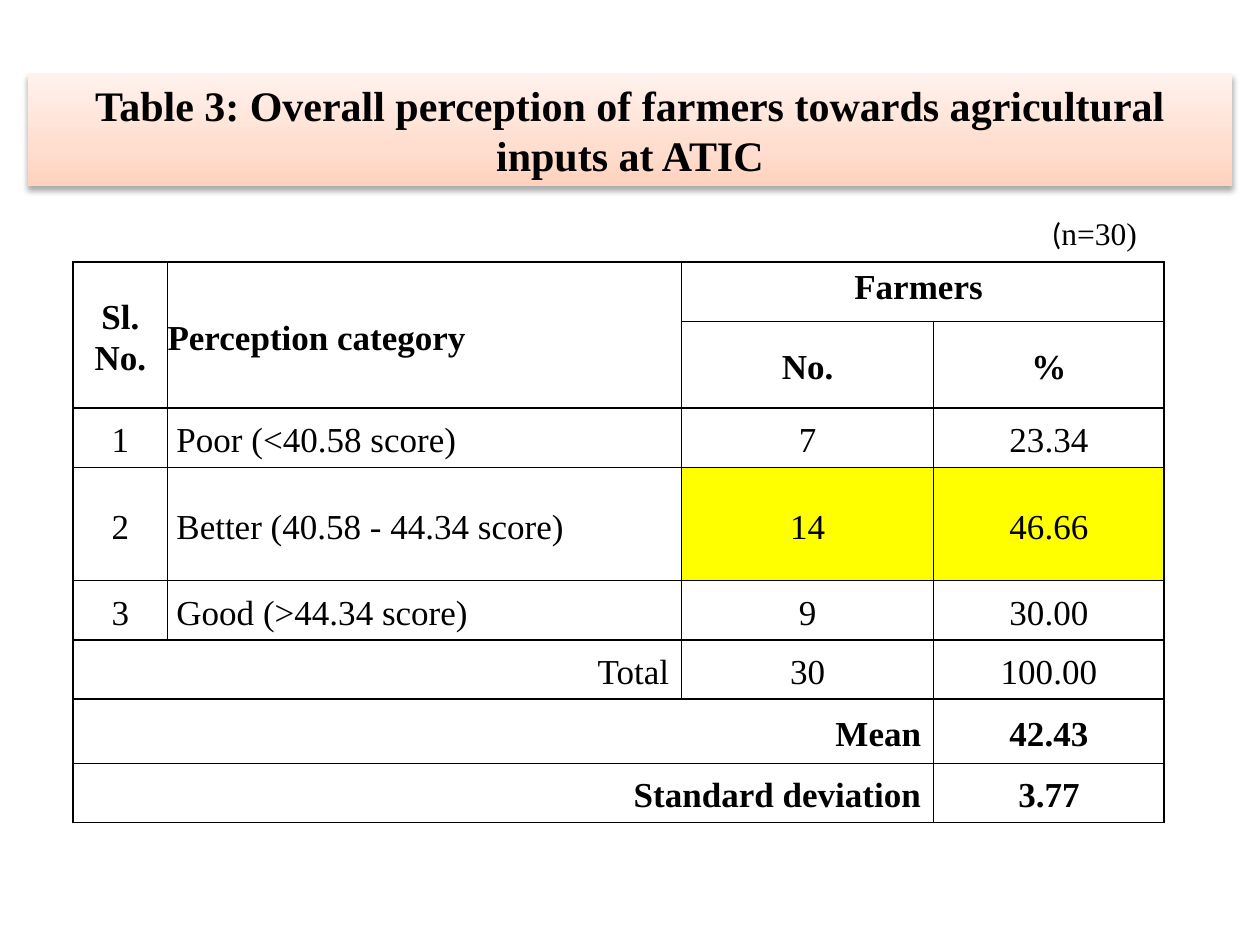
import copy

import pptx
import pptx.dml.color
import pptx.enum.text
import pptx.oxml
import pptx.oxml.ns
import pptx.util

Inches = pptx.util.Inches
Pt = pptx.util.Pt
RGBColor = pptx.dml.color.RGBColor
ALIGN = pptx.enum.text.PP_ALIGN
ANCHOR = pptx.enum.text.MSO_ANCHOR

BLACK = RGBColor(0x00, 0x00, 0x00)
YELLOW = RGBColor(0xFF, 0xFF, 0x00)
PEACH_STOPS = [
    (0, RGBColor(0xFF, 0xD2, 0xBD)),
    (0.35, RGBColor(0xFF, 0xDE, 0xD0)),
    (1, RGBColor(0xFF, 0xF2, 0xED)),
]
SERIF = "Times New Roman"
SANS = "Calibri"

COLUMN_WIDTHS = [0.75, 3.25, 0.83, 2, 1.83]
ROW_HEIGHTS = [0.47, 0.47, 0.47, 0.9, 0.47, 0.47, 0.51, 0.47]
TABLE_TEXT = [
    ["Sl. No.", "Perception category", "", "Farmers ", ""],
    ["", "", "", "No.", "%"],
    ["1", "Poor (<40.58 score)", "", "7", "23.34"],
    ["2", "Better (40.58 - 44.34 score)", "", "14", "46.66"],
    ["3", "Good (>44.34 score)", "", "9", "30.00"],
    ["", "", "Total ", "30", "100.00"],
    ["", "", "Mean ", "", "42.43"],
    ["", "", "Standard deviation ", "", "3.77"],
]
MERGES = [
    ((0, 0), (1, 0)),
    ((0, 1), (1, 1)),
    ((0, 2), (1, 2)),
    ((0, 3), (0, 4)),
    ((6, 2), (6, 3)),
    ((7, 2), (7, 3)),
]
HEADER_ROWS = 2
HIGHLIGHT_ROW = 3
TOTAL_ROW = 5


def add_run(paragraph, text, size, font=SERIF, bold=False):
    run = paragraph.add_run()
    run.text = text
    run.font.size = Pt(size)
    run.font.name = font
    run.font.bold = bold
    run.font.color.rgb = BLACK


def place(shape, left, top, width, height):
    shape.left, shape.top = Inches(left), Inches(top)
    shape.width, shape.height = Inches(width), Inches(height)


def add_shadow(shape):
    shape._element.spPr.append(pptx.oxml.parse_xml(
        f'<a:effectLst {pptx.oxml.ns.nsdecls("a")}>'
        f'<a:outerShdw blurRad="{Pt(3.5)}" dist="{Pt(2.2)}" dir="5400000" rotWithShape="0">'
        '<a:srgbClr val="000000"><a:alpha val="32000"/></a:srgbClr>'
        '</a:outerShdw></a:effectLst>'))


def fill_gradient(shape, stops, angle):
    shape.fill.gradient()
    shape.fill.gradient_angle = angle
    stop_list = shape.fill._fill._gradFill.gsLst
    stop_list.insert(1, copy.deepcopy(stop_list[0]))
    for stop, (position, color) in zip(shape.fill.gradient_stops, stops):
        stop.position = position
        stop.color.rgb = color


def format_title(title):
    place(title, 0.22, 0.58, 9.56, 0.9)
    fill_gradient(title, PEACH_STOPS, 90)
    add_shadow(title)
    title.text_frame.vertical_anchor = ANCHOR.MIDDLE
    heading = title.text_frame.paragraphs[0]
    heading.alignment = ALIGN.CENTER
    add_run(heading, "Table 3: Overall perception of farmers towards agricultural inputs at ATIC", 24, bold=True)


def add_sample_size(slide):
    note = slide.shapes.add_textbox(Inches(8.25), Inches(1.65), Inches(1), Inches(0.4))
    note.text_frame.word_wrap = True
    paragraph = note.text_frame.paragraphs[0]
    add_run(paragraph, "(", 18, SANS)
    add_run(paragraph, "n=30)", 18)


def set_borders(cell, open_sides):
    properties = cell._tc.get_or_add_tcPr()
    for side in "LRTB":
        paint = "<a:noFill/>" if side in open_sides else (
            f'<a:solidFill><a:srgbClr val="{BLACK}"/></a:solidFill>')
        properties.append(pptx.oxml.parse_xml(
            f'<a:ln{side} {pptx.oxml.ns.nsdecls("a")} w="{Pt(1)}">{paint}</a:ln{side}>'))


def open_sides_of(row, column):
    if column == 0:
        return "R" if row >= TOTAL_ROW else ""
    if column == 1:
        return "LR" if row >= TOTAL_ROW else "R"
    return "L" if column == 2 else ""


def layout_of(row, column):
    if column == 1:
        return ALIGN.LEFT, 0 if row < HEADER_ROWS else 0.07
    if column == 2:
        return ALIGN.RIGHT, 0.06 if row == TOTAL_ROW else 0
    return ALIGN.CENTER, 0.03


def format_cell(cell, row, column, text):
    set_borders(cell, open_sides_of(row, column))
    if row == HIGHLIGHT_ROW and column >= 3:
        cell.fill.solid()
        cell.fill.fore_color.rgb = YELLOW
    else:
        cell.fill.background()
    if not text:
        return
    cell.margin_left = cell.margin_bottom = 0
    cell.margin_right = cell.margin_top = Inches(0.03)
    cell.vertical_anchor = ANCHOR.TOP if (row, column) == (0, 3) else ANCHOR.MIDDLE
    paragraph = cell.text_frame.paragraphs[0]
    paragraph.alignment, indent = layout_of(row, column)
    paragraph.line_spacing = 1.07
    paragraph.space_after = Pt(8)
    paragraph._p.get_or_add_pPr().set("marL", str(Inches(indent)))
    add_run(paragraph, text, 20, bold=row < HEADER_ROWS or row > TOTAL_ROW)


def add_perception_table(slide):
    table = slide.shapes.add_table(
        len(ROW_HEIGHTS), len(COLUMN_WIDTHS), Inches(0.58), Inches(2.08),
        Inches(sum(COLUMN_WIDTHS)), Inches(sum(ROW_HEIGHTS))).table
    table.first_row = table.horz_banding = False
    for column, width in zip(table.columns, COLUMN_WIDTHS):
        column.width = Inches(width)
    for row, height in zip(table.rows, ROW_HEIGHTS):
        row.height = Inches(height)
    for first, last in MERGES:
        table.cell(*first).merge(table.cell(*last))
    for row, texts in enumerate(TABLE_TEXT):
        for column, text in enumerate(texts):
            format_cell(table.cell(row, column), row, column, text)


def main():
    presentation = pptx.Presentation()
    presentation.slide_width, presentation.slide_height = Inches(10), Inches(7.5)
    slide = presentation.slides.add_slide(presentation.slide_layouts.get_by_name("Title Only"))
    format_title(slide.shapes.title)
    add_perception_table(slide)
    add_sample_size(slide)
    presentation.save("out.pptx")


if __name__ == "__main__":
    main()
